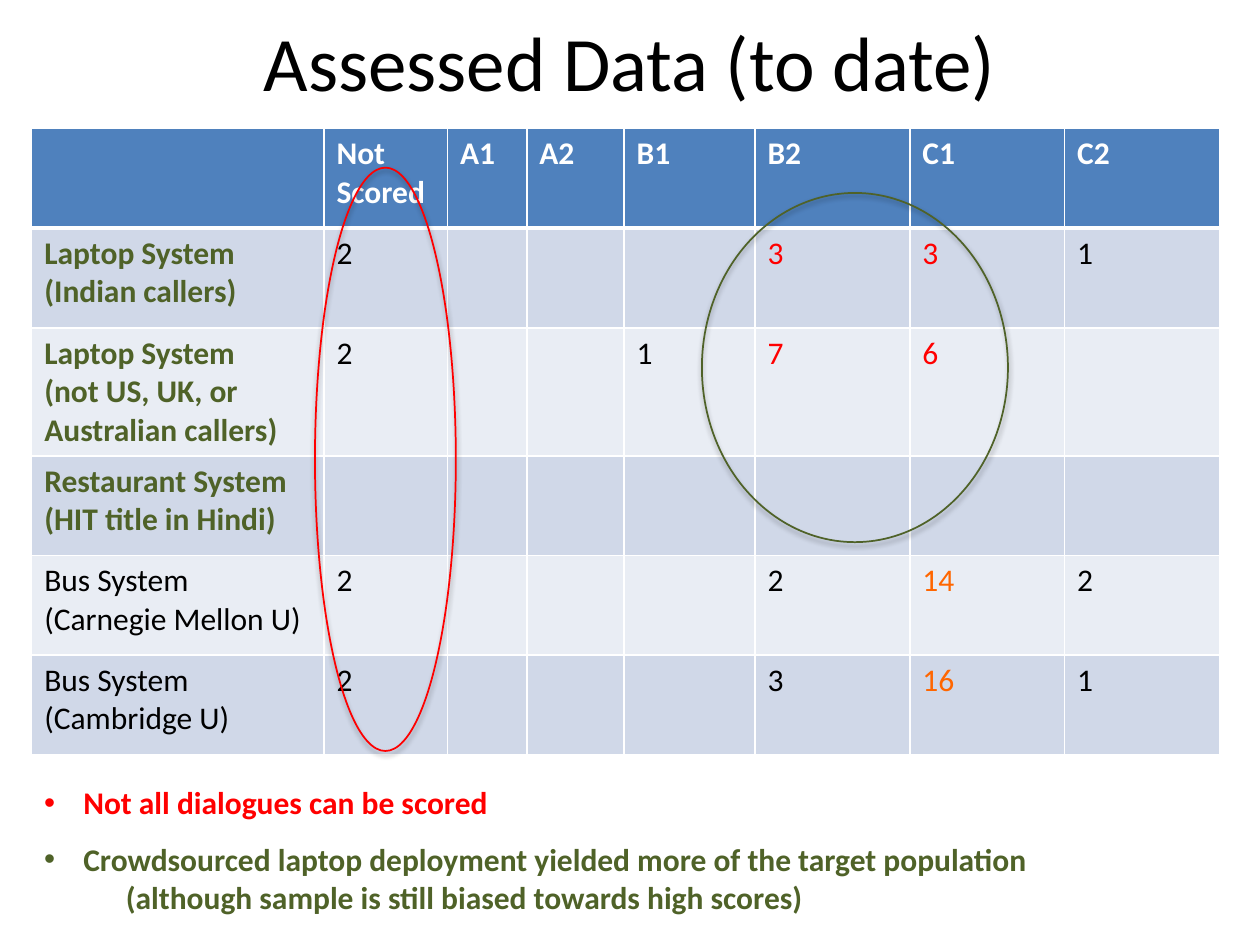
from lxml.etree import SubElement
from pptx import Presentation
from pptx.dml.color import RGBColor
from pptx.enum.shapes import MSO_SHAPE
from pptx.enum.text import MSO_ANCHOR, PP_ALIGN
from pptx.oxml import parse_xml
from pptx.oxml.ns import nsdecls, qn
from pptx.util import Cm, Pt

COLORS = {
    "black": "000000",
    "white": "FFFFFF",
    "header": "4F81BD",
    "dark band": "D0D8E8",
    "light band": "E9EDF4",
    "green": "4F6228",
    "red": "FF0000",
    "orange": "FF6600",
}

COLUMN_WIDTHS = [5.89, 2.49, 1.6, 1.96, 2.64, 3.12, 3.12, 3.12]
ROW_HEIGHTS = [2.01, 2.01, 2.16, 2.01, 2.01, 2.01]
B2, C1 = 5, 6
HEADINGS = ["", "Not\nScored", "A1", "A2", "B1", "B2", "C1", "C2"]
# Each system: label, whether it is crowdsourced, counts, colours by column
SYSTEMS = [
    ("Laptop System\n(Indian callers)", True,
     ["2", "", "", "", "3", "3", "1"], {B2: "red", C1: "red"}),
    ("Laptop System\n(not US, UK, or Australian callers)", True,
     ["2", "", "", "1", "7", "6", ""], {B2: "red", C1: "red"}),
    ("Restaurant System\n(HIT title in Hindi)", True, [""] * 7, {}),
    ("Bus System\n(Carnegie Mellon U)", False,
     ["2", "", "", "", "2", "14", "2"], {C1: "orange"}),
    ("Bus System\n(Cambridge U)", False,
     ["2", "", "", "", "3", "16", "1"], {C1: "orange"}),
]


def color(name):
    return RGBColor.from_string(COLORS[name])


def write(frame, text, size=18, color_name="black", bold=False, align=PP_ALIGN.LEFT):
    """Fill a text frame, one paragraph for each line of text."""
    frame.word_wrap = True
    frame.text = text
    for paragraph in frame.paragraphs:
        paragraph.alignment = align
        for run in paragraph.runs:
            run.font.name = "Calibri"
            run.font.size = Pt(size)
            run.font.bold = bold
            run.font.color.rgb = color(color_name)


def add_title(slide, left, top, width, height):
    title = slide.shapes.title
    title.left, title.top, title.width, title.height = left, top, width, height
    write(title.text_frame, "Assessed Data (to date)", size=44, align=PP_ALIGN.CENTER)
    title.text_frame.vertical_anchor = MSO_ANCHOR.MIDDLE


def set_borders(cell, bottom, top):
    properties = cell._tc.get_or_add_tcPr()
    widths = {"lnL": 1, "lnR": 1, "lnT": top, "lnB": bottom}
    for index, (tag, width) in enumerate(widths.items()):
        properties.insert(index, parse_xml(
            f'<a:{tag} {nsdecls("a")} w="{Pt(width)}"><a:solidFill>'
            f'<a:srgbClr val="{COLORS["white"]}"/></a:solidFill></a:{tag}>'))


def fill_cell(cell, text, fill, bottom=1, top=1, **text_format):
    if text:
        write(cell.text_frame, text, **text_format)
    cell.fill.solid()
    cell.fill.fore_color.rgb = color(fill)
    set_borders(cell, bottom, top)


def add_score_table(slide, left, top):
    table = slide.shapes.add_table(
        len(ROW_HEIGHTS), len(COLUMN_WIDTHS), left, top,
        Cm(sum(COLUMN_WIDTHS)), Cm(sum(ROW_HEIGHTS))).table
    for column, width in zip(table.columns, COLUMN_WIDTHS):
        column.width = Cm(width)
    for row, height in zip(table.rows, ROW_HEIGHTS):
        row.height = Cm(height)

    # Header row
    for column, heading in enumerate(HEADINGS):
        fill_cell(table.cell(0, column), heading, "header", bottom=3,
                  color_name="white", bold=True)

    # One row for each system
    for row, (label, crowdsourced, counts, highlights) in enumerate(SYSTEMS, 1):
        band = "dark band" if row % 2 else "light band"
        top_border = 3 if row == 1 else 1
        fill_cell(table.cell(row, 0), label, band, top=top_border, bold=crowdsourced,
                  color_name="green" if crowdsourced else "black")
        for column, count in enumerate(counts, 1):
            fill_cell(table.cell(row, column), count, band, top=top_border,
                      color_name=highlights.get(column, "black"))


def add_ring(slide, color_name, left, top, width, height):
    ring = slide.shapes.add_shape(MSO_SHAPE.OVAL, left, top, width, height)
    ring.fill.background()
    ring.line.color.rgb = color(color_name)
    ring.line.width = Pt(1)
    # Soft shadow straight below the outline
    ring.shadow.inherit = False
    effects = ring._element.spPr.find(qn("a:effectLst"))
    shadow = SubElement(effects, qn("a:outerShdw"), blurRad=str(Pt(3.1)),
                        dist=str(Pt(1.8)), dir="5400000", rotWithShape="0")
    shadow_color = SubElement(shadow, qn("a:srgbClr"), val=COLORS["black"])
    SubElement(shadow_color, qn("a:alpha"), val="35000")


def add_bullet(slide, text, color_name, left, top, width, height):
    """Add a bulleted line; any further lines are set in below it."""
    frame = slide.shapes.add_textbox(left, top, width, height).text_frame
    write(frame, text, color_name=color_name, bold=True)
    first, *others = [paragraph._p.get_or_add_pPr() for paragraph in frame.paragraphs]
    first.set("marL", str(Cm(0.79)))
    first.set("indent", str(Cm(-0.79)))
    SubElement(first, qn("a:buFont"), typeface="Arial")
    SubElement(first, qn("a:buChar"), char="•")
    for properties in others:
        properties.set("marL", str(Cm(1.65)))


def main():
    presentation = Presentation()
    presentation.slide_width, presentation.slide_height = Cm(25.4), Cm(19.05)
    slide = presentation.slides.add_slide(presentation.slide_layouts[5])
    margin = Cm(0.64)

    add_title(slide, Cm(1.27), Cm(0.13), Cm(22.86), Cm(2.18))
    add_score_table(slide, margin, Cm(2.59))
    add_bullet(slide, "Crowdsourced laptop deployment yielded more of the target population\n"
               "(although sample is still biased towards high scores)",
               "green", margin, Cm(16.81), Cm(20.96), Cm(1.8))
    add_ring(slide, "green", Cm(14.15), Cm(3.89), Cm(6.17), Cm(7.04))
    add_ring(slide, "red", Cm(6.35), Cm(3.38), Cm(2.84), Cm(11.76))
    add_bullet(slide, "Not all dialogues can be scored",
               "red", margin, Cm(15.67), Cm(24.76), Cm(1.02))
    presentation.save("out.pptx")


if __name__ == "__main__":
    main()
